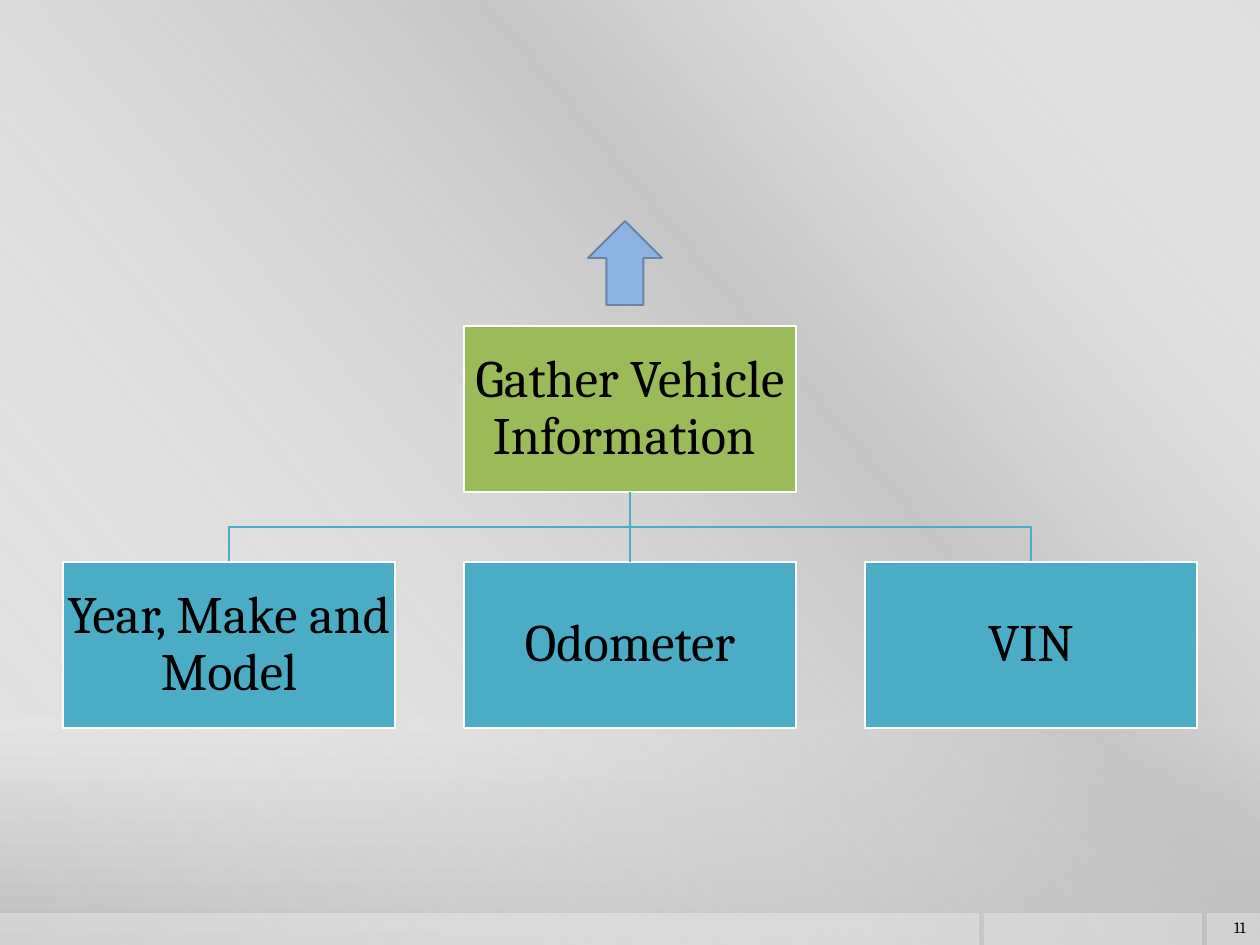
"""Build a slide showing the three facts gathered about a vehicle."""
from dataclasses import dataclass

import lxml.etree
import pptx
import pptx.dml.color
import pptx.enum.shapes
import pptx.enum.text
import pptx.oxml.ns
import pptx.util

SCALE = 914400 / 126
PAGE_WIDTH, PAGE_HEIGHT = 1260, 945
BOX_WIDTH, BOX_HEIGHT, BOX_PITCH = 332, 166, 401
LEFT, PARENT_TOP, CHILD_TOP = 63, 326, 562
BAR_TOP = 913
BARS = ((1207, 53), (984, 218), (0, 979))
LINE_WIDTH = 1.1
FONT = "Cambria"
COLORS = {
    "child": "4BACC6",
    "parent": "9BBB59",
    "arrow": "8DB3E2",
    "arrow_edge": "6884A7",
    "white": "FFFFFF",
    "black": "000000",
    "band": "BFBFBF",
    "top": "DEDEDE",
    "middle": "E1E1E1",
    "bottom": "BDBDBD",
}
SHAPES = pptx.enum.shapes.MSO_SHAPE
ALIGN = pptx.enum.text.PP_ALIGN


@dataclass(frozen=True)
class Node:
    text: str
    column: int
    top: int
    color: str

    @property
    def left(self) -> int:
        return LEFT + self.column * BOX_PITCH

    @property
    def center(self) -> int:
        return self.left + BOX_WIDTH // 2


@dataclass(frozen=True)
class Stop:
    position: int
    color: str
    opacity: int = 100


PARENT = Node("Gather Vehicle Information ", 1, PARENT_TOP, "parent")
CHILDREN = [
    Node(text, column, CHILD_TOP, "child")
    for column, text in enumerate(("Year, Make and Model", "Odometer", "VIN"))
]


def px(length: int) -> pptx.util.Emu:
    return pptx.util.Emu(round(length * SCALE))


def rgb(name: str) -> pptx.dml.color.RGBColor:
    return pptx.dml.color.RGBColor.from_string(COLORS[name])


def set_opacity(color_element, percent: int) -> None:
    alpha = lxml.etree.SubElement(color_element, pptx.oxml.ns.qn("a:alpha"))
    alpha.set("val", str(percent * 1000))


def set_gradient(fill, element, stops: list[Stop], clockwise: int) -> None:
    fill.gradient()
    fill.gradient_angle = 360 - clockwise
    stop_list = next(element.iter(pptx.oxml.ns.qn("a:gsLst")))
    for old in list(stop_list):
        stop_list.remove(old)
    for stop in stops:
        entry = lxml.etree.SubElement(stop_list, pptx.oxml.ns.qn("a:gs"))
        entry.set("pos", str(stop.position * 1000))
        color = lxml.etree.SubElement(entry, pptx.oxml.ns.qn("a:srgbClr"))
        color.set("val", COLORS[stop.color])
        if stop.opacity < 100:
            set_opacity(color, stop.opacity)


def set_line(line, color: str) -> None:
    line.color.rgb = rgb(color)
    line.width = pptx.util.Pt(LINE_WIDTH)


def add_shape(page, kind, left: int, top: int, width: int, height: int,
              fill: str | None = None, line: str | None = None):
    shape = page.shapes.add_shape(kind, px(left), px(top), px(width), px(height))
    shape.shadow.inherit = False
    if fill:
        shape.fill.solid()
        shape.fill.fore_color.rgb = rgb(fill)
    if line:
        set_line(shape.line, line)
    else:
        shape.line.fill.background()
    return shape


def write_text(box, text: str, *, size: int, align, margin: int | None = None,
               spacing: float | None = None) -> None:
    frame = box.text_frame
    frame.word_wrap = True
    frame.vertical_anchor = pptx.enum.text.MSO_ANCHOR.MIDDLE
    if margin is not None:
        frame.margin_left = frame.margin_right = px(margin)
        frame.margin_top = frame.margin_bottom = px(margin)
    para = frame.paragraphs[0]
    para.alignment = align
    para.line_spacing = spacing
    span = para.add_run()
    span.text = text
    span.font.name = FONT
    span.font.size = pptx.util.Pt(size)
    span.font.color.rgb = rgb("black")


def add_node(page, node: Node):
    box = add_shape(page, SHAPES.RECTANGLE, node.left, node.top,
                    BOX_WIDTH, BOX_HEIGHT, node.color, "white")
    write_text(box, node.text, size=30, align=ALIGN.CENTER, margin=3, spacing=0.9)
    return box


def add_elbow(page, parent: Node, child: Node) -> None:
    bottom = parent.top + BOX_HEIGHT
    middle = (bottom + child.top) // 2
    builder = page.shapes.build_freeform(parent.center, bottom, scale=SCALE)
    builder.add_line_segments(
        [(parent.center, middle), (child.center, middle), (child.center, child.top)],
        close=False,
    )
    elbow = builder.convert_to_shape()
    elbow.shadow.inherit = False
    elbow.fill.background()
    set_line(elbow.line, "child")


def add_straight(page, parent_box, child_box) -> None:
    link = page.shapes.add_connector(
        pptx.enum.shapes.MSO_CONNECTOR.STRAIGHT, 0, 0, 0, 0)
    link.begin_connect(parent_box, 2)
    link.end_connect(child_box, 0)
    set_line(link.line, "child")
    properties = link._element.spPr
    lxml.etree.SubElement(properties, pptx.oxml.ns.qn("a:effectLst"))


def add_backdrop(page) -> None:
    set_gradient(page.background.fill, page.element,
                 [Stop(0, "top"), Stop(76, "middle"), Stop(100, "bottom")], 90)
    sheen = add_shape(page, SHAPES.RECTANGLE, 0, 0, PAGE_WIDTH, PAGE_HEIGHT)
    set_gradient(sheen.fill, sheen._element,
                 [Stop(0, "white", 0), Stop(34, "band", 61),
                  Stop(38, "band", 76), Stop(100, "white", 0)], 140)
    for left, width in BARS:
        bar = add_shape(page, SHAPES.RECTANGLE, left, BAR_TOP, width,
                        PAGE_HEIGHT - BAR_TOP, "white")
        set_opacity(next(bar._element.spPr.iter(pptx.oxml.ns.qn("a:srgbClr"))), 30)


def main() -> None:
    deck = pptx.Presentation()
    deck.slide_width, deck.slide_height = px(PAGE_WIDTH), px(PAGE_HEIGHT)
    page = deck.slides.add_slide(deck.slide_layouts[6])
    add_backdrop(page)
    for child in CHILDREN:
        if child.column != PARENT.column:
            add_elbow(page, PARENT, child)
    parent_box = add_node(page, PARENT)
    for child in CHILDREN:
        child_box = add_node(page, child)
        if child.column == PARENT.column:
            add_straight(page, parent_box, child_box)
    number = page.shapes.add_textbox(px(1205), px(911), px(53), px(32))
    write_text(number, "11", size=9, align=ALIGN.RIGHT)
    add_shape(page, SHAPES.UP_ARROW, 588, 221, 74, 84, "arrow", "arrow_edge")
    deck.save("out.pptx")


if __name__ == "__main__":
    main()
